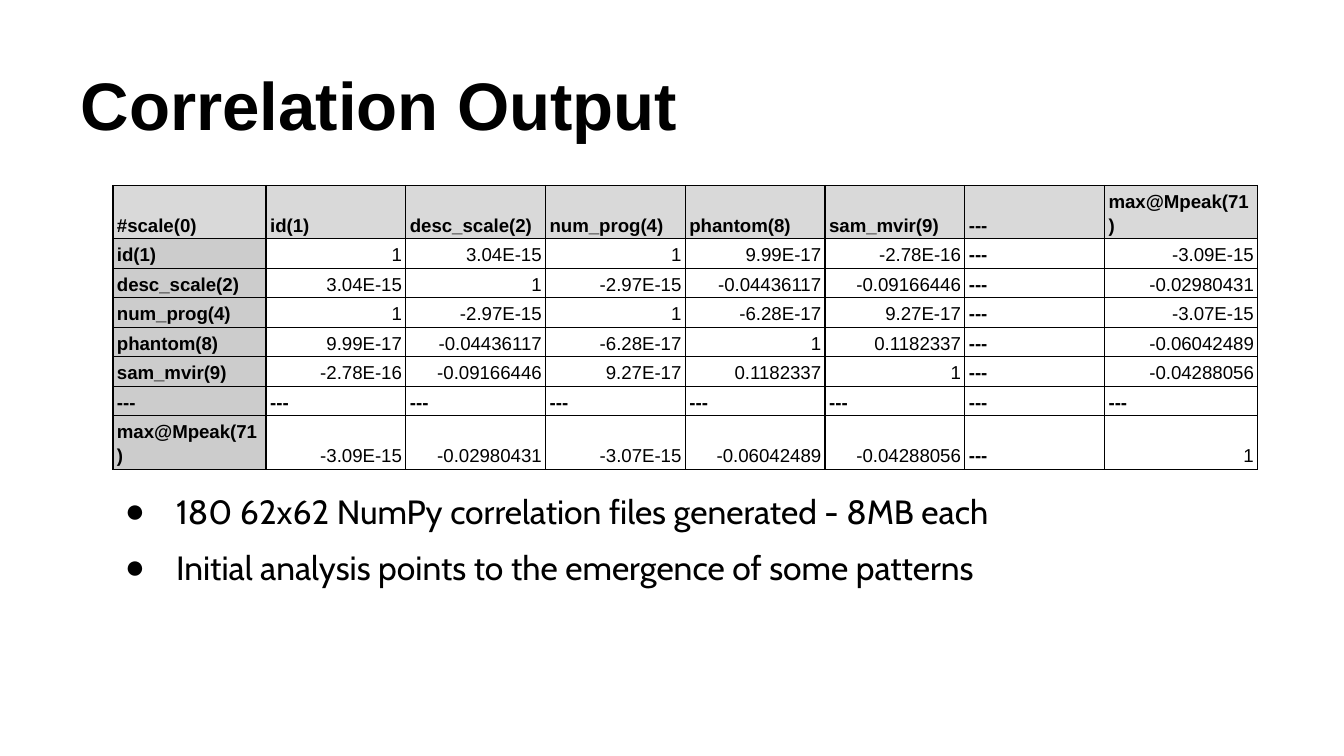
from dataclasses import dataclass
from lxml.etree import SubElement
from pptx import Presentation
from pptx.dml.color import RGBColor
from pptx.enum.text import MSO_ANCHOR as Anchor, PP_ALIGN as Align
from pptx.oxml.ns import qn
from pptx.util import Inches, Pt

COLORS = {"ink": "000000", "header": "D9D9D9", "label": "CCCCCC"}
SLIDE_WIDTH = 10
SLIDE_HEIGHT = SLIDE_WIDTH * 9 / 16
GAP = "---"
FIELDS = ["id(1)", "desc_scale(2)", "num_prog(4)", "phantom(8)",
          "sam_mvir(9)", GAP, "max@Mpeak(71)"]
# Lower triangle of the symmetric matrix; the gap row and column are elided.
CORRELATIONS = [
    ["1"],
    ["3.04E-15", "1"],
    ["1", "-2.97E-15", "1"],
    ["9.99E-17", "-0.04436117", "-6.28E-17", "1"],
    ["-2.78E-16", "-0.09166446", "9.27E-17", "0.1182337", "1"],
    [GAP] * 6,
    ["-3.09E-15", "-0.02980431", "-3.07E-15", "-0.06042489", "-0.04288056",
     GAP, "1"],
]
FINDINGS = ["180 62x62 NumPy correlation files generated - 8MB each",
            "Initial analysis points to the emergence of some patterns"]
LABEL_WIDTH, VALUE_WIDTH, ROW_HEIGHT = 1.14, 1.04, 0.22


@dataclass
class Entry:
    text: str
    fill: str | None = None

    @property
    def is_label(self) -> bool:
        return self.fill is not None or self.text == GAP


def write_text(paragraph, text: str, *, size: float, font: str = "Arial",
               bold: bool = False, align=Align.LEFT, spacing: float = 1.0) -> None:
    paragraph.alignment = align
    paragraph.line_spacing = spacing
    paragraph.space_before = Pt(0)
    run = paragraph.add_run()
    run.text = text
    run.font.name, run.font.size, run.font.bold = font, Pt(size), bold
    run.font.color.rgb = RGBColor.from_string(COLORS["ink"])


def add_bullet(paragraph) -> None:
    properties = paragraph._p.get_or_add_pPr()
    properties.set("marL", str(Inches(0.5)))
    properties.set("indent", str(Inches(-0.38)))
    color = SubElement(properties, qn("a:buClr"))
    SubElement(color, qn("a:srgbClr"), val=COLORS["ink"])
    SubElement(properties, qn("a:buChar"), char="●")


def add_borders(cell) -> None:
    for side in ("L", "R", "T", "B"):
        line = SubElement(cell._tc.get_or_add_tcPr(), qn(f"a:ln{side}"),
                          w=str(Pt(0.75)))
        fill = SubElement(line, qn("a:solidFill"))
        SubElement(fill, qn("a:srgbClr"), val=COLORS["ink"])


def place(placeholder, left: float, top: float, width: float, height: float,
          anchor) -> None:
    placeholder.left, placeholder.top = Inches(left), Inches(top)
    placeholder.width, placeholder.height = Inches(width), Inches(height)
    frame = placeholder.text_frame
    frame.vertical_anchor = anchor
    frame.margin_left = frame.margin_right = Inches(0.1)
    frame.margin_top = frame.margin_bottom = Inches(0.1)


def matrix_entries() -> list[list[Entry]]:
    """Header row, then each field's label and its mirrored correlations."""
    rows = [[Entry(name, "header") for name in ["#scale(0)", *FIELDS]]]
    for i, field in enumerate(FIELDS):
        values = [Entry(CORRELATIONS[max(i, j)][min(i, j)])
                  for j in range(len(FIELDS))]
        rows.append([Entry(field, "label"), *values])
    return rows


def fill_cell(cell, entry: Entry) -> None:
    cell.vertical_anchor = Anchor.BOTTOM
    cell.margin_left = cell.margin_right = Inches(0.03)
    cell.margin_top = cell.margin_bottom = Inches(0.02)
    add_borders(cell)
    if entry.fill:
        cell.fill.solid()
        cell.fill.fore_color.rgb = RGBColor.from_string(COLORS[entry.fill])
    else:
        cell.fill.background()
    write_text(cell.text_frame.paragraphs[0], entry.text, size=10,
               bold=entry.is_label, spacing=1.15,
               align=Align.LEFT if entry.is_label else Align.RIGHT)


def add_matrix(slide, rows: list[list[Entry]]) -> None:
    count = len(rows)
    widths = [LABEL_WIDTH, *[VALUE_WIDTH] * (count - 2), LABEL_WIDTH]
    matrix = slide.shapes.add_table(
        count, count, Inches(0.84), Inches(1.38),
        Inches(sum(widths)), Inches(ROW_HEIGHT * count)).table
    for column, width in zip(matrix.columns, widths):
        column.width = Inches(width)
    for r, row in enumerate(rows):
        matrix.rows[r].height = Inches(ROW_HEIGHT)
        for c, entry in enumerate(row):
            fill_cell(matrix.cell(r, c), entry)


def main() -> None:
    deck = Presentation()
    deck.slide_width = Inches(SLIDE_WIDTH)
    deck.slide_height = Inches(SLIDE_HEIGHT)
    slide = deck.slides.add_slide(deck.slide_layouts[1])

    title, findings = slide.placeholders
    place(title, 0.5, 0.23, 9, 0.94, Anchor.BOTTOM)
    write_text(title.text_frame.paragraphs[0], "Correlation Output",
               size=36, bold=True)

    place(findings, 0.71, 3.44, 8.79, 1.85, Anchor.TOP)
    frame = findings.text_frame
    for i, finding in enumerate(FINDINGS):
        paragraph = frame.add_paragraph() if i else frame.paragraphs[0]
        write_text(paragraph, finding, size=18, font="Cabin",
                   align=Align.JUSTIFY, spacing=1.38)
        add_bullet(paragraph)

    add_matrix(slide, matrix_entries())
    deck.save("out.pptx")


if __name__ == "__main__":
    main()
